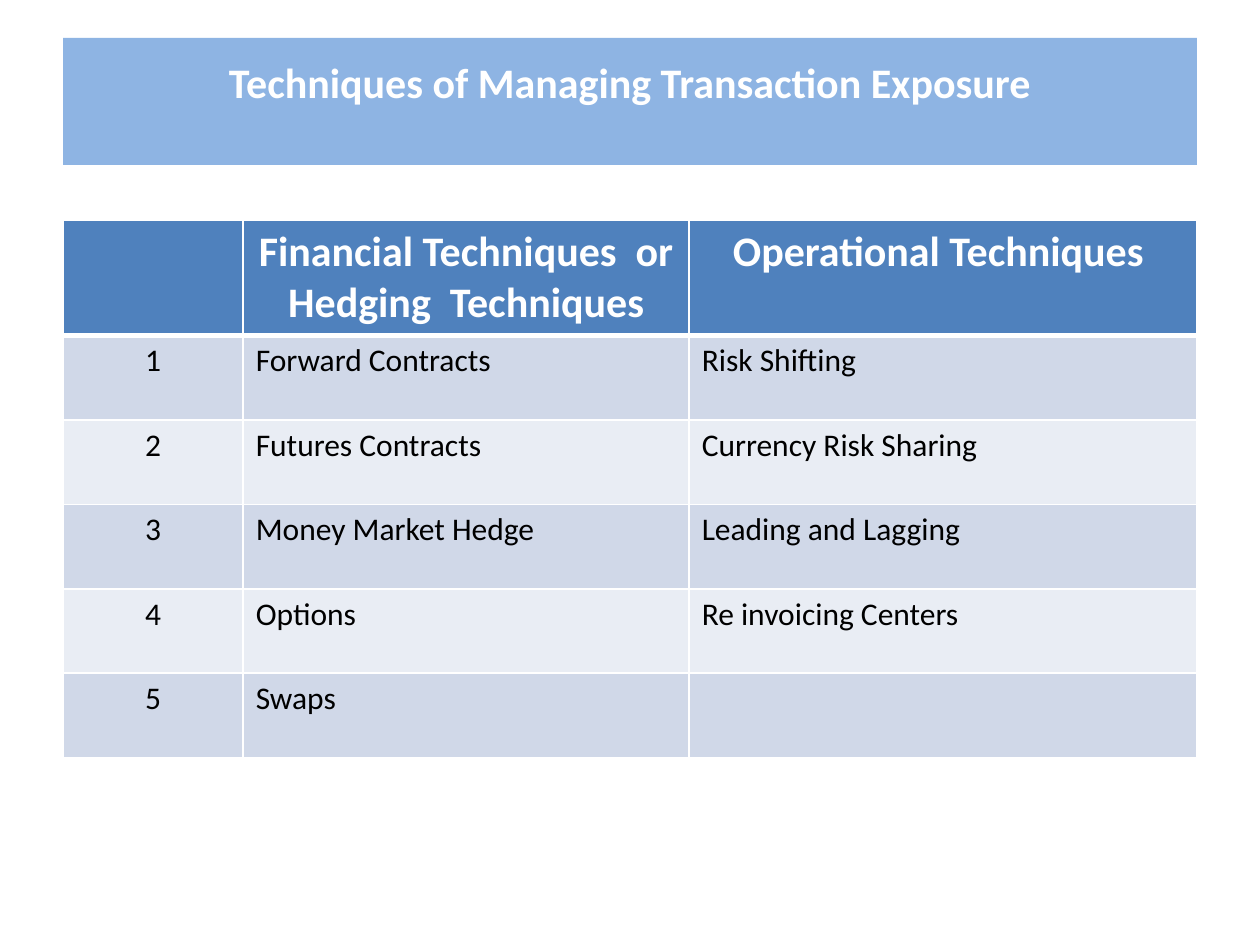
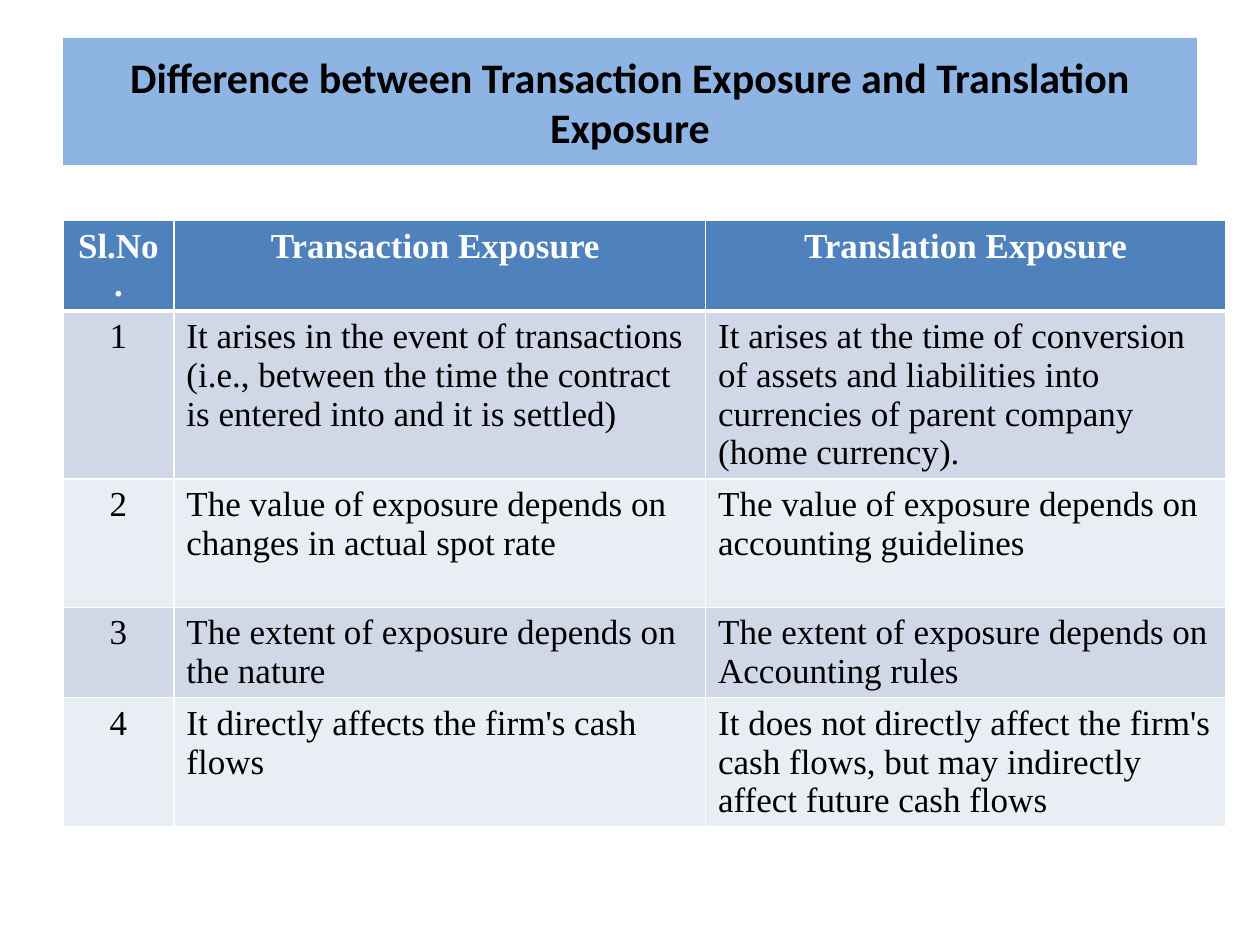
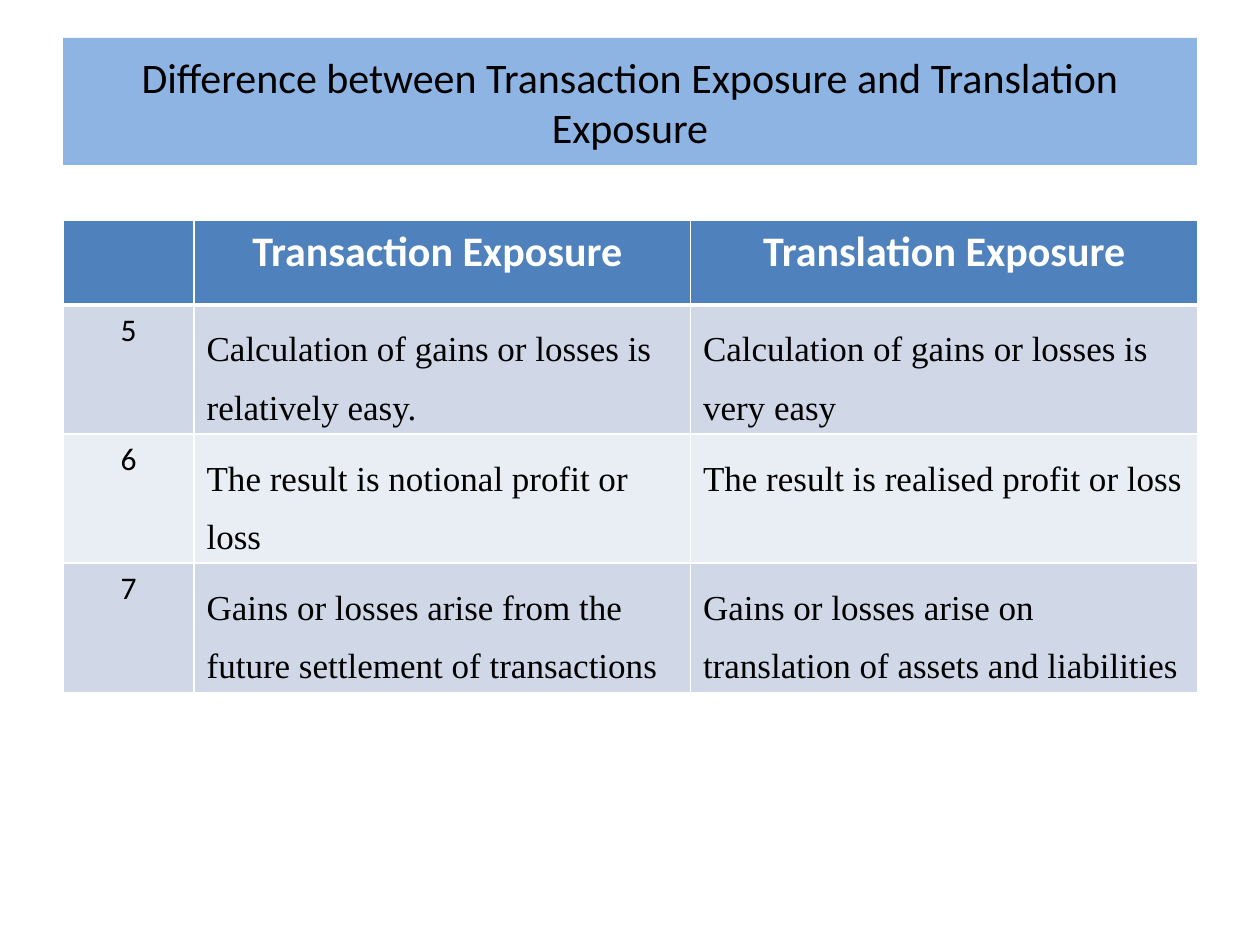
from itertools import product

from lxml.etree import SubElement
from pptx import Presentation
from pptx.dml.color import RGBColor
from pptx.enum.text import MSO_ANCHOR, PP_ALIGN
from pptx.oxml.ns import qn
from pptx.util import Inches, Pt

WHITE = RGBColor(0xFF, 0xFF, 0xFF)
BLACK = RGBColor(0, 0, 0)
BAND = RGBColor(0x8E, 0xB4, 0xE3)
HEAD = RGBColor(0x4F, 0x81, 0xBD)
ODD = RGBColor(0xD0, 0xD8, 0xE8)
EVEN = RGBColor(0xE9, 0xED, 0xF4)

SANS = "Calibri"
SERIF = "Times New Roman"
LARGE = (SANS, 24)
SMALL = (SANS, 18)
ROMAN = (SERIF, 20)

TOPIC = "Difference between Transaction Exposure and Translation Exposure"
PAIR = ("Transaction Exposure ", "Translation Exposure")


class Deck:
    """Holds the shared style and the current slide."""

    def __init__(self):
        self.prs = Presentation()
        self.prs.slide_width = Inches(10)
        self.prs.slide_height = Inches(7.5)
        self.slide = None

    def label(self, frame, text, face, color, bold=False, align=None, lead=None):
        for i, line in enumerate(text.split("\n")):
            para = frame.add_paragraph() if i else frame.paragraphs[0]
            para.alignment = align
            para.line_spacing = lead
            run = para.add_run()
            run.text = line
            run.font.name, size = face
            run.font.size = Pt(size)
            run.font.bold = bold
            run.font.color.rgb = color

    def title(self, text, color=BLACK, bold=True, lead=None, foot=0.05):
        self.slide = self.prs.slides.add_slide(self.prs.slide_layouts[5])
        box = self.slide.shapes.title
        box.left, box.top = Inches(0.5), Inches(0.3)
        box.width, box.height = Inches(9), Inches(1.01)
        box.fill.solid()
        box.fill.fore_color.rgb = BAND
        frame = box.text_frame
        frame.word_wrap = True
        frame.vertical_anchor = MSO_ANCHOR.MIDDLE
        frame.margin_bottom = Inches(foot)
        self.label(frame, text, LARGE, color, bold, PP_ALIGN.CENTER, lead)

    def border(self, cell, base):
        props = cell._tc.get_or_add_tcPr()
        for side, width in zip("LRTB", (1, 1, 1, base)):
            line = SubElement(props, qn(f"a:ln{side}"), w=str(Pt(width)))
            fill = SubElement(line, qn("a:solidFill"))
            SubElement(fill, qn("a:srgbClr"), val=str(WHITE))

    def table(self, rows, cols, head, num, body, lead=None, tall=None):
        high = [(tall or {}).get(r, 0.67) for r in range(len(rows))]
        grid = self.slide.shapes.add_table(
            len(rows), len(cols), Inches(0.5), Inches(1.75),
            Inches(sum(cols)), Inches(sum(high))).table
        for col, width in zip(grid.columns, cols):
            col.width = Inches(width)
        for row, height in zip(grid.rows, high):
            row.height = Inches(height)
        for r, c in product(range(len(rows)), range(len(cols))):
            cell = grid.cell(r, c)
            top = r == 0
            self.border(cell, 3 if top else 1)
            cell.fill.solid()
            cell.fill.fore_color.rgb = HEAD if top else ODD if r % 2 else EVEN
            if rows[r][c]:
                mid = top or c == 0
                self.label(cell.text_frame, rows[r][c],
                           head if top else body if c else num,
                           WHITE if top else BLACK, top,
                           PP_ALIGN.CENTER if mid else None,
                           None if mid else lead)


def main():
    deck = Deck()

    deck.title("Techniques of Managing Transaction Exposure", WHITE,
               lead=1.15, foot=0.42)
    deck.table([
        ("", "Financial Techniques  or Hedging  Techniques",
         "Operational Techniques "),
        ("1", "Forward Contracts", "Risk Shifting"),
        ("2", "Futures Contracts", "Currency Risk Sharing"),
        ("3", "Money Market Hedge", "Leading and Lagging"),
        ("4", "Options", "Re invoicing Centers"),
        ("5", "Swaps", ""),
    ], (1.43, 3.54, 4.03), LARGE, SMALL, SMALL)

    deck.title(TOPIC)
    deck.table([
        ("Sl.No.", *PAIR),
        ("1", "It arises in the event of transactions (i.e., between the time "
         "the contract is entered into and it is settled)",
         "It arises at the time of conversion of assets and liabilities into "
         "currencies of parent company (home currency)."),
        ("2", "The value of exposure depends on changes in actual spot rate",
         "The value of exposure depends on accounting guidelines"),
        ("3", "The extent of exposure depends on the nature",
         "The extent of exposure depends on\nAccounting rules"),
        ("4", "It directly affects the firm's cash flows",
         "It does not directly affect the firm's cash flows, but may "
         "indirectly affect future cash flows"),
    ], (0.88, 4.22, 4.13), ROMAN, ROMAN, ROMAN, tall={2: 1.02})

    deck.title(TOPIC, bold=False)
    deck.table([
        ("", *PAIR),
        ("5", "Calculation of gains or losses is relatively easy.",
         "Calculation of gains or losses is very easy"),
        ("6", "The result is notional profit or loss",
         "The result is realised profit or loss"),
        ("7", "Gains or losses arise from the future settlement of transactions",
         "Gains or losses arise on translation of assets and liabilities"),
    ], (1.04, 3.94, 4.03), LARGE, SMALL, ROMAN, lead=1.5)

    deck.prs.save("out.pptx")


if __name__ == "__main__":
    main()
